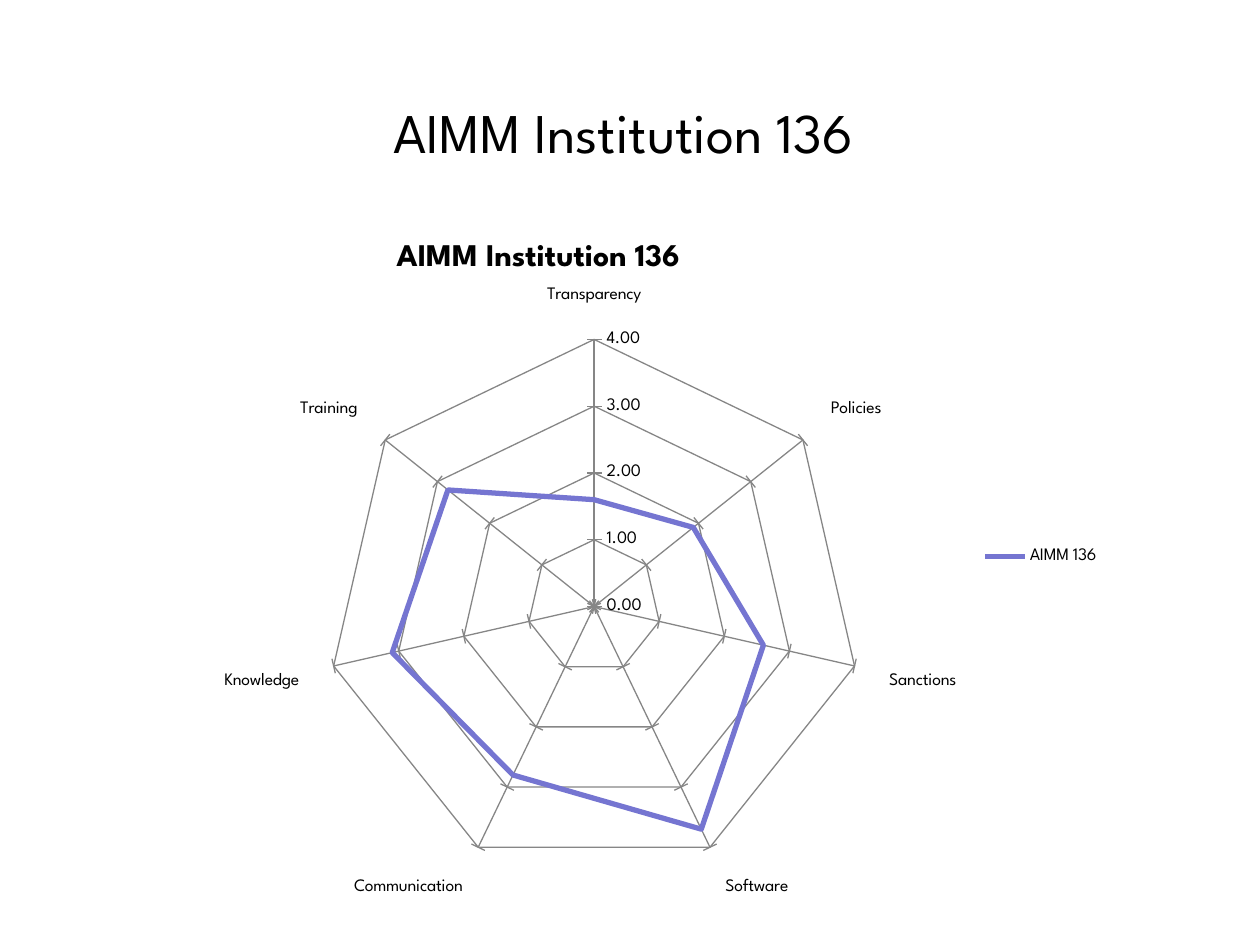
"""Build a slide with a titled radar chart of AIMM scores."""
from dataclasses import dataclass

from lxml import etree
from pptx import Presentation
from pptx.chart.data import CategoryChartData
from pptx.dml.color import RGBColor
from pptx.enum.chart import XL_CHART_TYPE, XL_LEGEND_POSITION, XL_TICK_MARK
from pptx.enum.text import MSO_ANCHOR, PP_ALIGN
from pptx.oxml.ns import qn
from pptx.util import Inches, Pt

RADAR = XL_CHART_TYPE.RADAR
RIGHT = XL_LEGEND_POSITION.RIGHT
OUT, CROSS = XL_TICK_MARK.OUTSIDE, XL_TICK_MARK.CROSS
MIDDLE, CENTER = MSO_ANCHOR.MIDDLE, PP_ALIGN.CENTER

FONT = "League Spartan"
COLORS = {"text": "000000", "grid": "868686", "score": "7575D1"}
WIDE, HIGH = Inches(10), Inches(7.5)
TITLE = "AIMM Institution 136"
SCORES = {
    "Transparency": 1.6,
    "Policies": 1.9,
    "Sanctions": 2.6,
    "Software": 3.7,
    "Communication": 2.8,
    "Knowledge": 3.1,
    "Training": 2.8,
}


@dataclass
class Area:
    """Hold a box as shares of its parent."""
    x: float
    y: float
    w: float = 0
    h: float = 0

    def frame(self) -> tuple[int, int, int, int]:
        """Return the box in slide units."""
        return (int(self.x * WIDE), int(self.y * HIGH),
                int(self.w * WIDE), int(self.h * HIGH))


HEAD = Area(0.075, 0.067, 0.84, 0.144)
CHART = Area(0.158, 0.211, 0.725, 0.756)
NAME = Area(0.21, 0.05)
PLOT = Area(0.14, 0.196, 0.585, 0.748)


def style(font, size: float, bold: bool = False) -> None:
    """Set the face, size, weight and colour of a font."""
    font.name, font.size, font.bold = FONT, Pt(size), bold
    font.color.rgb = RGBColor.from_string(COLORS["text"])


def stroke(line, color: str, width: float) -> None:
    """Set the colour and width of a line."""
    line.color.rgb = RGBColor.from_string(COLORS[color])
    line.width = Pt(width)


def place(item, area: Area, index: int) -> None:
    """Give a chart part a manual layout."""
    for old in item.findall(qn("c:layout")):
        item.remove(old)
    layout = etree.Element(qn("c:layout"))
    manual = etree.SubElement(layout, qn("c:manualLayout"))
    marks = [("xMode", "edge"), ("yMode", "edge"), ("x", area.x), ("y", area.y)]
    if area.w:
        marks = [("layoutTarget", "inner"), *marks, ("w", area.w), ("h", area.h)]
    for tag, value in marks:
        etree.SubElement(manual, qn(f"c:{tag}")).set("val", str(value))
    item.insert(index, layout)


def add_head(slide) -> None:
    """Add the slide title."""
    frame = slide.shapes.add_textbox(*HEAD.frame()).text_frame
    frame.word_wrap = True
    frame.vertical_anchor = MIDDLE
    frame.text = TITLE
    frame.paragraphs[0].alignment = CENTER
    style(frame.paragraphs[0].runs[0].font, 32)


def add_radar(slide) -> None:
    """Add the radar chart with its title, axes and legend."""
    data = CategoryChartData(number_format="0.00")
    data.categories = list(SCORES)
    data.add_series("AIMM 136", list(SCORES.values()))
    chart = slide.shapes.add_chart(RADAR, *CHART.frame(), data).chart
    style(chart.font, 10)

    chart.has_title = True
    frame = chart.chart_title.text_frame
    frame.text = TITLE
    style(frame.paragraphs[0].runs[0].font, 18, True)
    place(chart.chart_title._element, NAME, 1)
    place(chart._chartSpace.chart.plotArea, PLOT, 0)

    chart.has_legend = True
    chart.legend.position = RIGHT
    chart.legend.include_in_layout = False
    style(chart.legend.font, 10)

    scale = chart.value_axis
    scale.minimum_scale, scale.maximum_scale, scale.major_unit = 0, 4, 1
    scale.tick_labels.number_format = "0.00"
    scale.tick_labels.number_format_is_linked = False
    for axis, tick in ((chart.category_axis, OUT), (scale, CROSS)):
        axis.has_major_gridlines = True
        axis.major_tick_mark = tick
        stroke(axis.major_gridlines.format.line, "grid", 0.75)
        stroke(axis.format.line, "grid", 0.75)
        style(axis.tick_labels.font, 10)

    plot = chart.plots[0]
    plot.vary_by_categories = False
    stroke(plot.series[0].format.line, "score", 3)


def main() -> None:
    """Build and save the slide."""
    deck = Presentation()
    deck.slide_width, deck.slide_height = WIDE, HIGH
    slide = deck.slides.add_slide(deck.slide_layouts[6])
    add_head(slide)
    add_radar(slide)
    deck.save("out.pptx")


if __name__ == "__main__":
    main()
